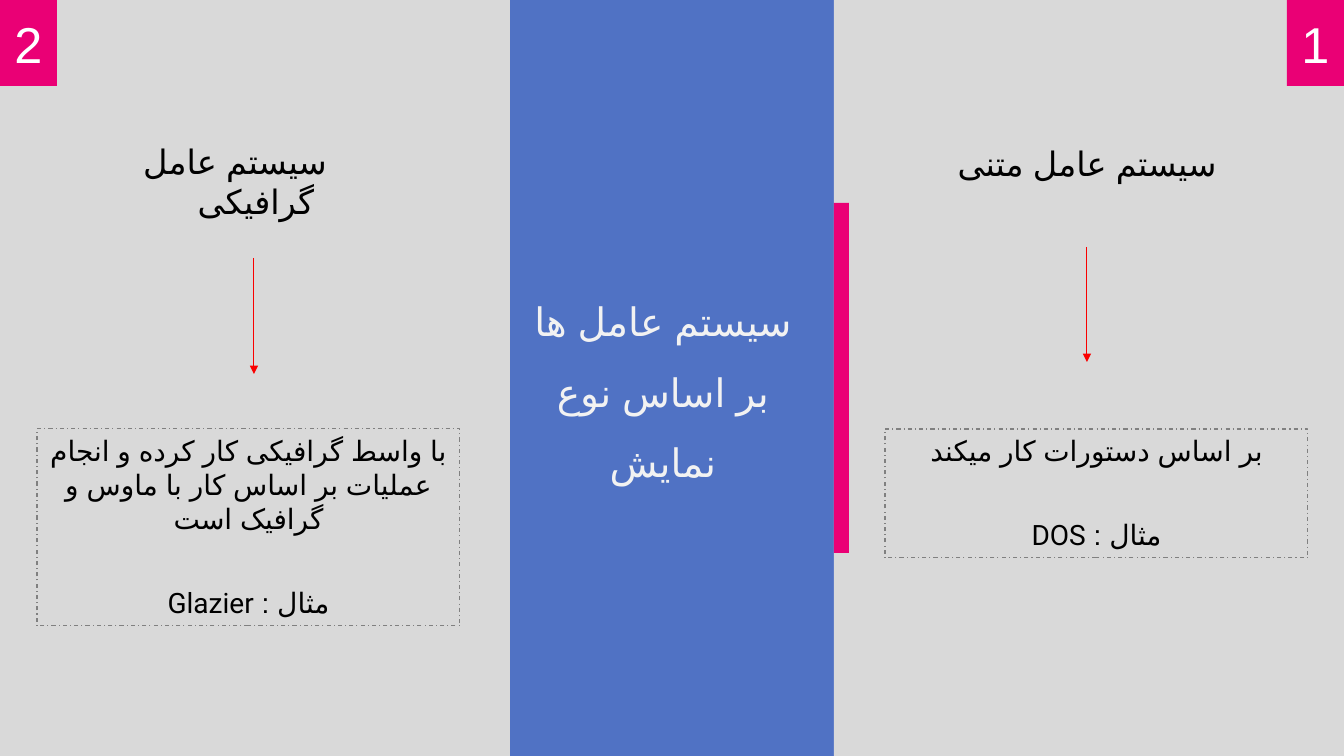
from dataclasses import dataclass
from typing import NamedTuple

from lxml.etree import SubElement
from pptx import Presentation
from pptx.dml.color import RGBColor as Rgb
from pptx.enum.dml import MSO_LINE as Dash
from pptx.enum.shapes import MSO_CONNECTOR as Conn, MSO_SHAPE as Kind
from pptx.enum.text import MSO_ANCHOR as Anchor, MSO_AUTO_SIZE as Auto, PP_ALIGN as Align
from pptx.oxml.ns import qn
from pptx.util import Pt

SCALE = 914400 / 100.8


@dataclass(frozen=True)
class Theme:
    blue: str = "5072C4"
    gray: str = "D9D9D9"
    pink: str = "EA0075"
    red: str = "F90000"
    edge: str = "808080"
    ink: str = "000000"
    white: str = "FFFFFF"
    pale: str = "F2F2F2"
    script: str = "Arial"
    badge: int = 36
    title: int = 28
    head: int = 24
    body: int = 20
    thin: float = 0.75
    gap: int = 6
    wide: int = 36


THEME = Theme()


class Box(NamedTuple):
    left: int
    top: int
    width: int
    height: int


class Font(NamedTuple):
    name: str
    size: int
    color: str


class Line(NamedTuple):
    text: str
    before: int = THEME.gap
    indent: int = 0


@dataclass(frozen=True)
class Panel:
    number: str
    pane: Box
    badge: Box
    head: Box
    title: Line
    arrow: Box
    card: Box
    lines: tuple[Line, ...]


PANELS = (
    Panel(
        "1", Box(834, 0, 510, 756), Box(1287, 0, 57, 86),
        Box(921, 138, 332, 50), Line("سیستم عامل متنی"),
        Box(1087, 247, 0, 115), Box(885, 429, 423, 129),
        (Line("بر اساس دستورات کار میکند"), Line("مثال : DOS", THEME.wide)),
    ),
    Panel(
        "2", Box(0, 0, 510, 756), Box(0, 0, 57, 86),
        Box(86, 136, 340, 50), Line("سیستم عامل گرافیکی", indent=42),
        Box(254, 258, 0, 116), Box(37, 429, 423, 197),
        (
            Line("با واسط گرافیکی کار کرده و انجام عملیات بر اساس کار با ماوس و گرافیک است"),
            Line("مثال : Glazier", THEME.wide),
        ),
    ),
)


def px(count: int) -> int:
    return round(count * SCALE)


def place(box: Box) -> tuple[int, ...]:
    return tuple(px(side) for side in box)


def block(slide, box: Box, fill: str | None = None):
    shape = slide.shapes.add_shape(Kind.RECTANGLE, *place(box))
    shape.shadow.inherit = False
    shape.line.fill.background()
    if fill:
        shape.fill.solid()
        shape.fill.fore_color.rgb = Rgb.from_string(fill)
    else:
        shape.fill.background()
    return shape


def write(para, text: str, font: Font) -> None:
    para.alignment = Align.CENTER
    run = para.add_run()
    run.text = text
    run.font.name = font.name
    run.font.size = Pt(font.size)
    run.font.color.rgb = Rgb.from_string(font.color)
    props = run._r.get_or_add_rPr()
    props.set("lang", "fa-IR")
    SubElement(props, qn("a:cs"), typeface=THEME.script)


def fill_lines(shape, lines: tuple[Line, ...], font: Font) -> None:
    frame = shape.text_frame
    frame.word_wrap = True
    frame.auto_size = Auto.SHAPE_TO_FIT_TEXT
    frame.vertical_anchor = Anchor.TOP
    for spot, line in enumerate(lines):
        para = frame.add_paragraph() if spot else frame.paragraphs[0]
        write(para, line.text, font)
        para.space_before = Pt(line.before)
        props = para._p.get_or_add_pPr()
        props.set("rtl", "1")
        if line.indent:
            props.set("indent", str(px(line.indent)))


def draw_arrow(slide, box: Box) -> None:
    left, top, width, height = place(box)
    arrow = slide.shapes.add_connector(Conn.STRAIGHT, left, top, left + width, top + height)
    arrow.line.color.rgb = Rgb.from_string(THEME.red)
    arrow.line.width = Pt(THEME.thin)
    SubElement(arrow.line._get_or_add_ln(), qn("a:tailEnd"), type="triangle")
    SubElement(arrow._element.spPr, qn("a:effectLst"))


def draw_title(slide) -> None:
    frame = slide.shapes.add_textbox(*place(Box(522, 269, 282, 147))).text_frame
    frame.word_wrap = True
    frame.auto_size = Auto.SHAPE_TO_FIT_TEXT
    para = frame.paragraphs[0]
    para.line_spacing = 1.5
    write(para, "سیستم عامل ها بر اساس نوع نمایش", Font("Arial", THEME.title, THEME.pale))


def draw_panel(slide, panel: Panel) -> None:
    badge = block(slide, panel.badge, THEME.pink)
    badge.text_frame.vertical_anchor = Anchor.MIDDLE
    write(badge.text_frame.paragraphs[0], panel.number, Font("Arial", THEME.badge, THEME.white))
    head = slide.shapes.add_textbox(*place(panel.head))
    fill_lines(head, (panel.title,), Font("Cambria", THEME.head, THEME.ink))
    draw_arrow(slide, panel.arrow)
    card = block(slide, panel.card)
    card.line.color.rgb = Rgb.from_string(THEME.edge)
    card.line.width = Pt(THEME.thin)
    card.line.dash_style = Dash.DASH_DOT
    fill_lines(card, panel.lines, Font("Roboto", THEME.body, THEME.ink))


def main() -> None:
    deck = Presentation()
    deck.slide_width, deck.slide_height = px(1344), px(756)
    slide = deck.slides.add_slide(deck.slide_layouts[6])
    block(slide, Box(0, 0, 842, 756), THEME.blue)
    for panel in PANELS:
        block(slide, panel.pane, THEME.gray)
    draw_title(slide)
    block(slide, Box(834, 203, 15, 350), THEME.pink)
    for panel in PANELS:
        draw_panel(slide, panel)
    deck.save("out.pptx")


if __name__ == "__main__":
    main()
